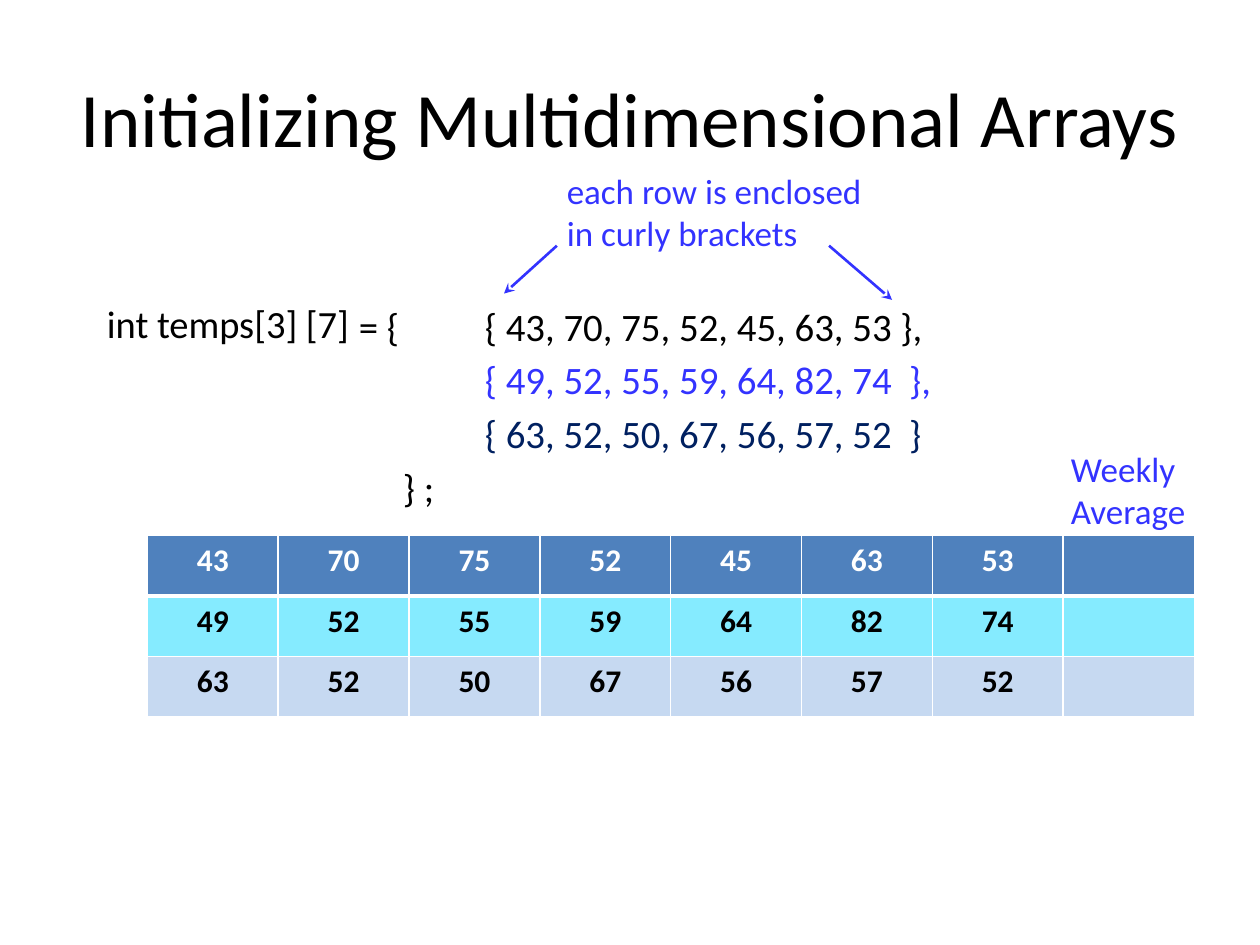
from pptx import Presentation
from pptx.dml.color import RGBColor
from pptx.enum.shapes import MSO_CONNECTOR
from pptx.enum.text import MSO_ANCHOR, PP_ALIGN
from pptx.oxml.ns import qn
from pptx.util import Inches, Pt
from lxml.etree import SubElement

LINE = MSO_CONNECTOR.STRAIGHT
MIDDLE, TOP = MSO_ANCHOR.MIDDLE, MSO_ANCHOR.TOP
LEFT, CENTER = PP_ALIGN.LEFT, PP_ALIGN.CENTER

FONT = "Calibri"
BLACK = RGBColor(0x00, 0x00, 0x00)
WHITE = RGBColor(0xFF, 0xFF, 0xFF)
BLUE = RGBColor(0x33, 0x33, 0xFF)
NAVY = RGBColor(0x00, 0x20, 0x60)
STEEL = RGBColor(0x4F, 0x81, 0xBD)
CYAN = RGBColor(0x85, 0xEB, 0xFF)
PALE = RGBColor(0xC6, 0xD9, 0xF1)

TEMPS = [
    [43, 70, 75, 52, 45, 63, 53],
    [49, 52, 55, 59, 64, 82, 74],
    [63, 52, 50, 67, 56, 57, 52],
]
FILLS = [STEEL, CYAN, PALE]
INKS = [WHITE, BLACK, BLACK]
ROW_H = 0.48


def add_run(para, text, size, color, bold=False):
    run = para.add_run()
    run.text = text
    run.font.name = FONT
    run.font.size = Pt(size)
    run.font.bold = bold
    run.font.color.rgb = color


def add_text(slide, box, lines, size, align=LEFT, anchor=TOP, gap=4):
    """Add a text box from (text, color) lines; return its paragraphs."""
    frame = slide.shapes.add_textbox(*map(Inches, box)).text_frame
    frame.word_wrap = True
    frame.vertical_anchor = anchor
    for num, (text, color) in enumerate(lines):
        para = frame.add_paragraph() if num else frame.paragraphs[0]
        para.alignment = align
        para.space_before = Pt(gap)
        add_run(para, text, size, color)
    return frame.paragraphs


def add_code(slide):
    """Write the initializer with its rows lined up on a tab stop."""
    rows = ["{ " + ", ".join(map(str, row)) for row in TEMPS]
    lines = [
        ("= {\t" + rows[0] + " },", BLACK),
        ("\t" + rows[1] + "  },", BLUE),
        ("\t" + rows[2] + "  }", NAVY),
        ("} ;", BLACK),
    ]
    paras = add_text(slide, (2.75, 2.35, 5, 1.65), lines, 22.2)
    for para in paras[:-1]:
        stops = SubElement(para._p.get_or_add_pPr(), qn("a:tabLst"))
        SubElement(stops, qn("a:tab"), pos=str(Inches(1)), algn="l")
    paras[-1]._p.get_or_add_pPr().set("marL", str(Inches(0.35)))


def add_edge(cell, side, width):
    edge = SubElement(cell._tc.get_or_add_tcPr(), qn("a:ln" + side),
                      w=str(Pt(width)))
    fill = SubElement(edge, qn("a:solidFill"))
    SubElement(fill, qn("a:srgbClr"), val=str(WHITE))


def add_grid(slide, left, width, data):
    """Add a table with one fill per row and white rules."""
    size = len(data), len(data[0])
    table = slide.shapes.add_table(
        *size, Inches(left), Inches(4.25), Inches(width),
        Inches(ROW_H * len(data))).table
    table.horz_banding = False
    for row, values in enumerate(data):
        table.rows[row].height = Inches(ROW_H)
        for col, value in enumerate(values):
            cell = table.cell(row, col)
            for side in "LRTB":
                thick = (row, side) in [(0, "B"), (1, "T")]
                add_edge(cell, side, 3 if thick else 1)
            cell.fill.solid()
            cell.fill.fore_color.rgb = FILLS[row]
            if value:
                para = cell.text_frame.paragraphs[0]
                para.alignment = CENTER
                add_run(para, str(value), 18, INKS[row], True)


def add_arrow(slide, start, end):
    line = slide.shapes.add_connector(LINE, *map(Inches, start + end))
    line.line.color.rgb = BLUE
    line.line.width = Pt(1.5)
    SubElement(line.line._get_or_add_ln(), qn("a:tailEnd"), type="stealth")
    SubElement(line._element.spPr, qn("a:effectLst"))


def main():
    deck = Presentation()
    deck.slide_width, deck.slide_height = Inches(10), Inches(7.5)
    slide = deck.slides.add_slide(deck.slide_layouts[6])

    add_text(slide, (0.5, 0.3, 9, 1.25),
             [("Initializing Multidimensional Arrays", BLACK)],
             44, CENTER, MIDDLE, 0)
    add_text(slide, (0.75, 2.33, 9.25, 0.64),
             [("int temps[3] [7]", BLACK)], 22)
    add_grid(slide, 1.17, 7.27, TEMPS)
    add_code(slide)
    add_grid(slide, 8.44, 1.04, [[None]] * len(TEMPS))
    add_text(slide, (8.4, 3.5, 1.17, 0.84), [("Weekly Average", BLUE)], 20)
    add_arrow(slide, (6.58, 1.95), (7.08, 2.38))
    add_arrow(slide, (4.42, 1.95), (4, 2.33))
    add_text(slide, (4.4, 1.3, 2.73, 0.84),
             [("each row is enclosed in curly brackets", BLUE)], 20)
    deck.save("out.pptx")


if __name__ == "__main__":
    main()
